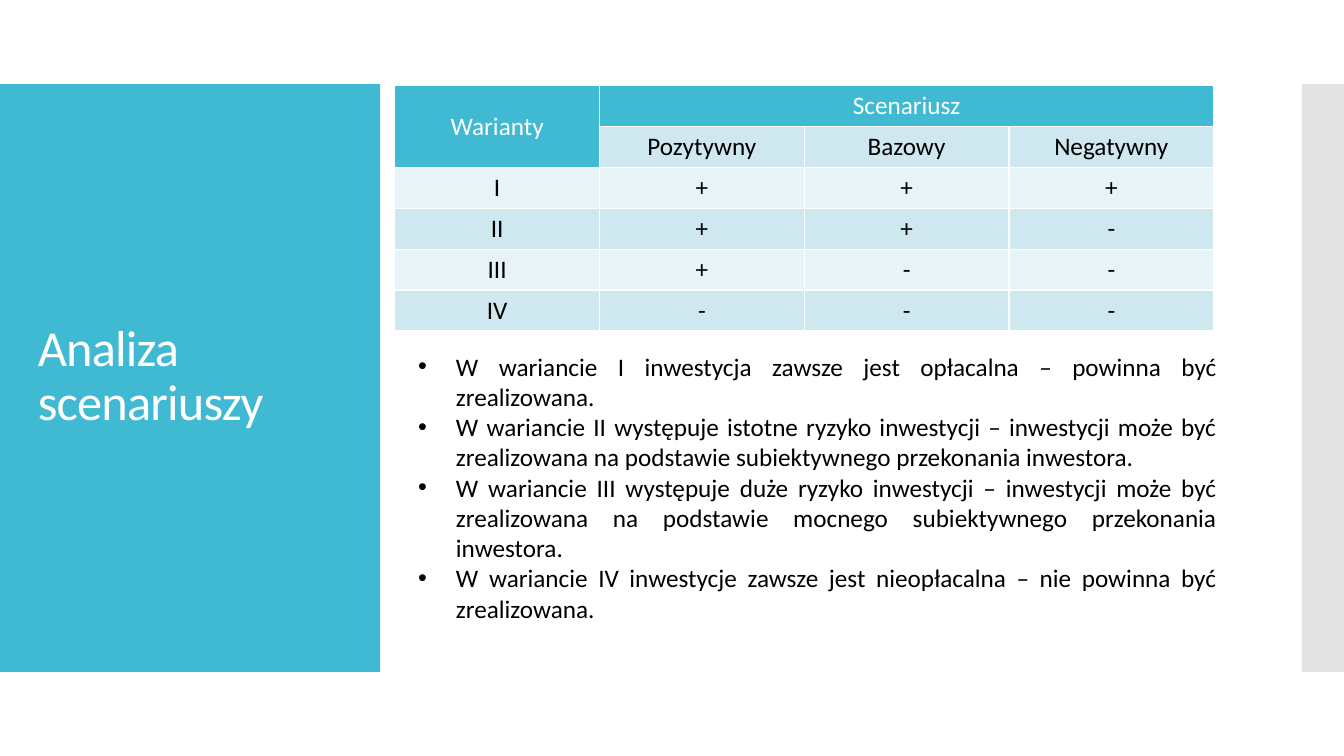
from pptx import Presentation
from pptx.dml.color import RGBColor
from pptx.enum.shapes import MSO_SHAPE as SHAPE
from pptx.enum.text import MSO_ANCHOR as ANCHOR, PP_ALIGN as ALIGN
from pptx.oxml.xmlchemy import OxmlElement
from pptx.util import Pt
from lxml.etree import SubElement
from pptx.oxml.ns import qn


def rgb(color):
    return RGBColor.from_string(color)


def add_text(p, text, size, color, align):
    p.alignment = align
    r = p.add_run()
    r.text = text
    for name, value in {"name": "Calibri", "size": Pt(size), "bold": False}.items():
        setattr(r.font, name, value)
    r.font.color.rgb = rgb(color)
    return r


TEAL, WHITE, BLACK = "40BAD2", "FFFFFF", "000000"
BANDS = ["E8F3F7", "CFE7EE"]

prs = Presentation()
prs.slide_width, prs.slide_height = Pt(960), Pt(540)
s = prs.slides.add_slide(prs.slide_layouts[6])

# Side panels
for left, width, color in [(0, 271.5, TEAL), (930, 30, "C8C8C8")]:
    panel = s.shapes.add_shape(SHAPE.RECTANGLE, Pt(left), Pt(60), Pt(width), Pt(420))
    panel.shadow.inherit = False
    panel.fill.solid()
    panel.fill.fore_color.rgb = rgb(color)
    panel.line.fill.background()

# The right panel is half transparent
srgb = panel.fill._xPr.find(qn("a:solidFill")).find(qn("a:srgbClr"))
SubElement(srgb, qn("a:alpha")).set("val", "50000")

# Title
title = s.shapes.add_textbox(Pt(20), Pt(88.5), Pt(232), Pt(362))
tf = title.text_frame
tf.word_wrap = True
tf.vertical_anchor = ANCHOR.MIDDLE
p = tf.paragraphs[0]
p.line_spacing = 0.9
r = add_text(p, "Analiza scenariuszy", 36, WHITE, ALIGN.LEFT)
r.font._element.set("spc", "-60")

# Scenario table
rows = [
    ["Warianty", "Scenariusz", "", ""],
    ["", "Pozytywny", "Bazowy", "Negatywny"],
    ["I", "+", "+", "+"],
    ["II", "+", "+", "-"],
    ["III", "+", "-", "-"],
    ["IV", "-", "-", "-"],
]
table = s.shapes.add_table(6, 4, Pt(282), Pt(61.2), Pt(585), Pt(175.2)).table
table.first_row = table.horz_banding = False
for row in table.rows:
    row.height = Pt(29.2)
for i, row in enumerate(rows):
    for j, text in enumerate(row):
        cell = table.cell(i, j)
        header = i == 0 or (i == 1 and j == 0)
        cell.vertical_anchor = ANCHOR.MIDDLE
        for side in ("a:lnL", "a:lnR", "a:lnT", "a:lnB"):
            ln = SubElement(cell._tc.get_or_add_tcPr(), qn(side), w=str(Pt(1)))
            fill = SubElement(ln, qn("a:solidFill"))
            SubElement(fill, qn("a:srgbClr"), val=WHITE)
        cell.fill.solid()
        cell.fill.fore_color.rgb = rgb(TEAL if header else BANDS[i % 2])
        if text:
            add_text(cell.text_frame.paragraphs[0], text, 18,
                     WHITE if header else BLACK, ALIGN.CENTER)
table.cell(0, 0).merge(table.cell(1, 0))
table.cell(0, 1).merge(table.cell(0, 3))

# Conclusions
conclusions = [
    "W wariancie I inwestycja zawsze jest opłacalna – powinna być zrealizowana.",
    "W wariancie II występuje istotne ryzyko inwestycji – inwestycji może być "
    "zrealizowana na podstawie subiektywnego przekonania inwestora.",
    "W wariancie III występuje duże ryzyko inwestycji – inwestycji może być "
    "zrealizowana na podstawie mocnego subiektywnego przekonania inwestora.",
    "W wariancie IV inwestycje zawsze jest nieopłacalna – nie powinna być zrealizowana.",
]
box = s.shapes.add_textbox(Pt(291.6), Pt(247.2), Pt(584.6), Pt(204))
tf = box.text_frame
tf.word_wrap = True
for i, text in enumerate(conclusions):
    p = tf.add_paragraph() if i else tf.paragraphs[0]
    add_text(p, text, 18, BLACK, ALIGN.JUSTIFY)
    pPr = p._p.get_or_add_pPr()
    pPr.set("marL", str(Pt(27)))
    pPr.set("indent", str(Pt(-27)))
    for tag, attr, value in [("a:buFont", "typeface", "Arial"), ("a:buChar", "char", "•")]:
        bullet = OxmlElement(tag)
        bullet.set(attr, value)
        pPr.append(bullet)

prs.save("out.pptx")
